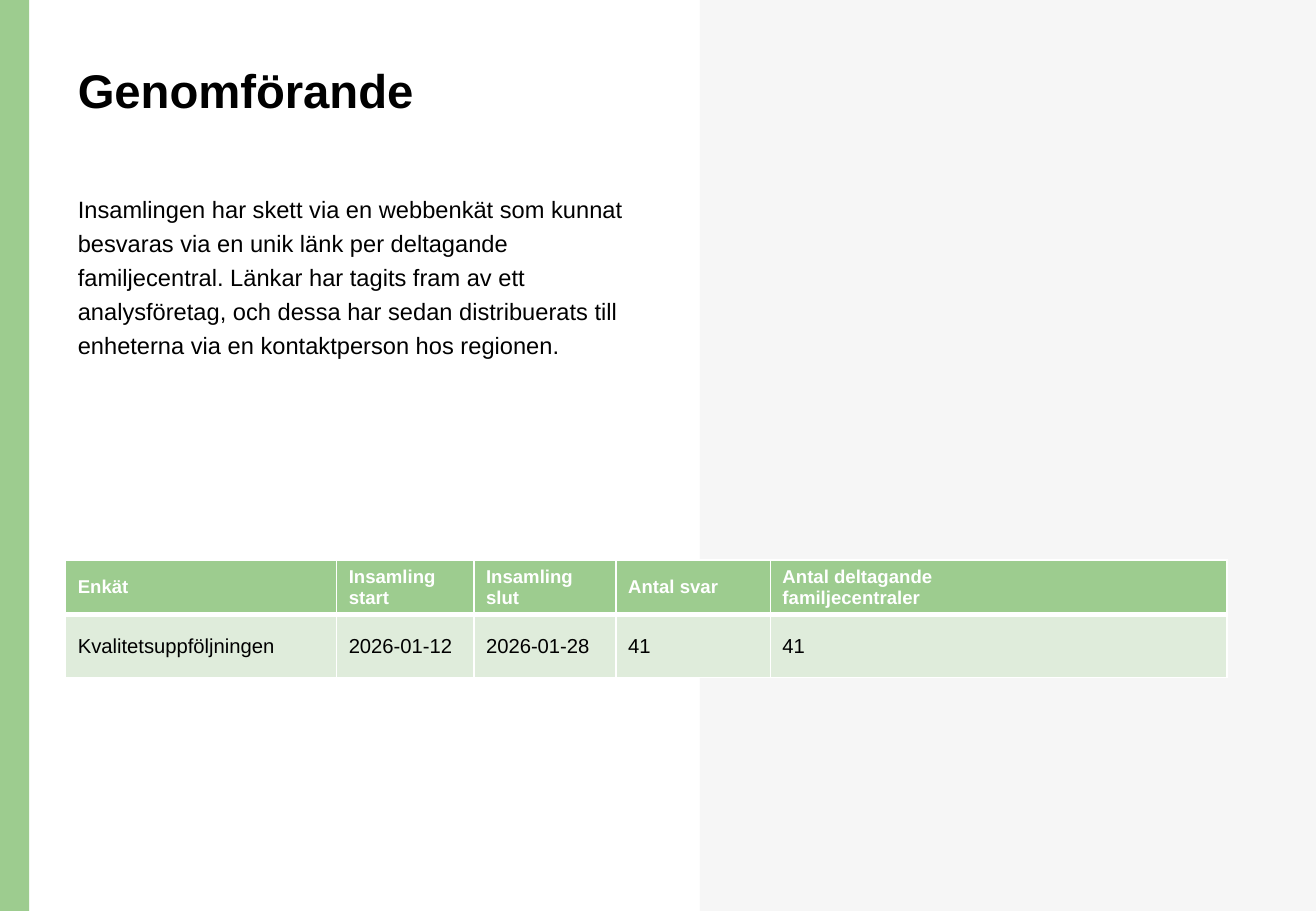
from lxml import etree
from pptx import Presentation
from pptx.dml.color import RGBColor
from pptx.enum.shapes import MSO_SHAPE
from pptx.enum.text import MSO_ANCHOR, MSO_AUTO_SIZE, PP_ALIGN
from pptx.oxml.ns import qn
from pptx.util import Inches, Pt

COLORS = {"text": "000000", "white": "FFFFFF", "panel": "F6F6F6",
          "green": "9DCC8F", "pale_green": "DFECDB"}


def style_text(tf, size, color, bold=False):
    for p in tf.paragraphs:
        for r in p.runs:
            r.font.name = "Arial"
            r.font.size = Pt(size)
            r.font.bold = bold
            r.font.color.rgb = RGBColor.from_string(COLORS[color])


def add_border(cell, side, width):
    ln = etree.SubElement(cell._tc.get_or_add_tcPr(), qn(f"a:ln{side}"), w=str(Pt(width)))
    fill = etree.SubElement(ln, qn("a:solidFill"))
    etree.SubElement(fill, qn("a:srgbClr"), val=COLORS["white"])


prs = Presentation()
prs.slide_width, prs.slide_height = Inches(10.83), Inches(7.5)
slide = prs.slides.add_slide(prs.slide_layouts[1])
shapes = slide.shapes

# Background panel and side bar, behind the placeholders
for i, (left, width, color) in enumerate([(5.76, 5.07, "panel"), (0, 0.24, "green")]):
    sp = shapes.add_shape(MSO_SHAPE.RECTANGLE, Inches(left), 0, Inches(width), prs.slide_height)
    sp.shadow.inherit = False
    sp.fill.solid()
    sp.fill.fore_color.rgb = RGBColor.from_string(COLORS[color])
    sp.line.fill.background()
    shapes._spTree.insert(2 + i, sp._element)

# Title and body
title, body = shapes.title, slide.placeholders[1]
title.text_frame.text = "Genomförande"
body.text_frame.text = (
    "Insamlingen har skett via en webbenkät som kunnat besvaras via en unik länk "
    "per deltagande familjecentral. Länkar har tagits fram av ett analysföretag, och "
    "dessa har sedan distribuerats till enheterna via en kontaktperson hos regionen.")
for sp, box, size, spacing, bold in [
        (title, (0.54, 0.51, 9.71, 0.99), 28, 0.9, True),
        (body, (0.54, 1.51, 4.88, 5.28), 14, 1.2, False)]:
    sp.left, sp.top, sp.width, sp.height = map(Inches, box)
    tf = sp.text_frame
    tf.word_wrap = True
    tf.auto_size = MSO_AUTO_SIZE.NONE
    tf.vertical_anchor = MSO_ANCHOR.TOP
    p = tf.paragraphs[0]
    pPr = p._p.get_or_add_pPr()
    pPr.set("marL", "0")
    pPr.set("indent", "0")
    etree.SubElement(pPr, qn("a:buNone"))
    p.alignment = PP_ALIGN.LEFT
    p.line_spacing = spacing
    p.space_before = Pt(0)
    style_text(tf, size, "text", bold)

# Survey table
rows = [["Enkät", "Insamling start", "Insamling slut", "Antal svar",
         "Antal deltagande\nfamiljecentraler"],
        ["Kvalitetsuppföljningen", "2026-01-12", "2026-01-28", "41", "41"]]
col_widths = [2.23, 1.13, 1.17, 1.27, 3.76]
row_heights = [0.45, 0.52]
row_styles = [("green", 11, "white", True), ("pale_green", 12, "text", False)]
border_widths = [{"L": 1, "R": 1, "T": 1, "B": 3}, {"L": 1, "R": 1, "T": 3, "B": 1}]

table = shapes.add_table(len(rows), len(col_widths), Inches(0.54), Inches(4.61),
                         Inches(sum(col_widths)), Inches(sum(row_heights))).table
for col, width in zip(table.columns, col_widths):
    col.width = Inches(width)
for r, texts in enumerate(rows):
    table.rows[r].height = Inches(row_heights[r])
    fill, size, color, bold = row_styles[r]
    for c, text in enumerate(texts):
        cell = table.cell(r, c)
        cell.text_frame.text = text
        cell.vertical_anchor = MSO_ANCHOR.MIDDLE
        style_text(cell.text_frame, size, color, bold)
        for side, width in border_widths[r].items():
            add_border(cell, side, width)
        cell.fill.solid()
        cell.fill.fore_color.rgb = RGBColor.from_string(COLORS[fill])

prs.save("out.pptx")
